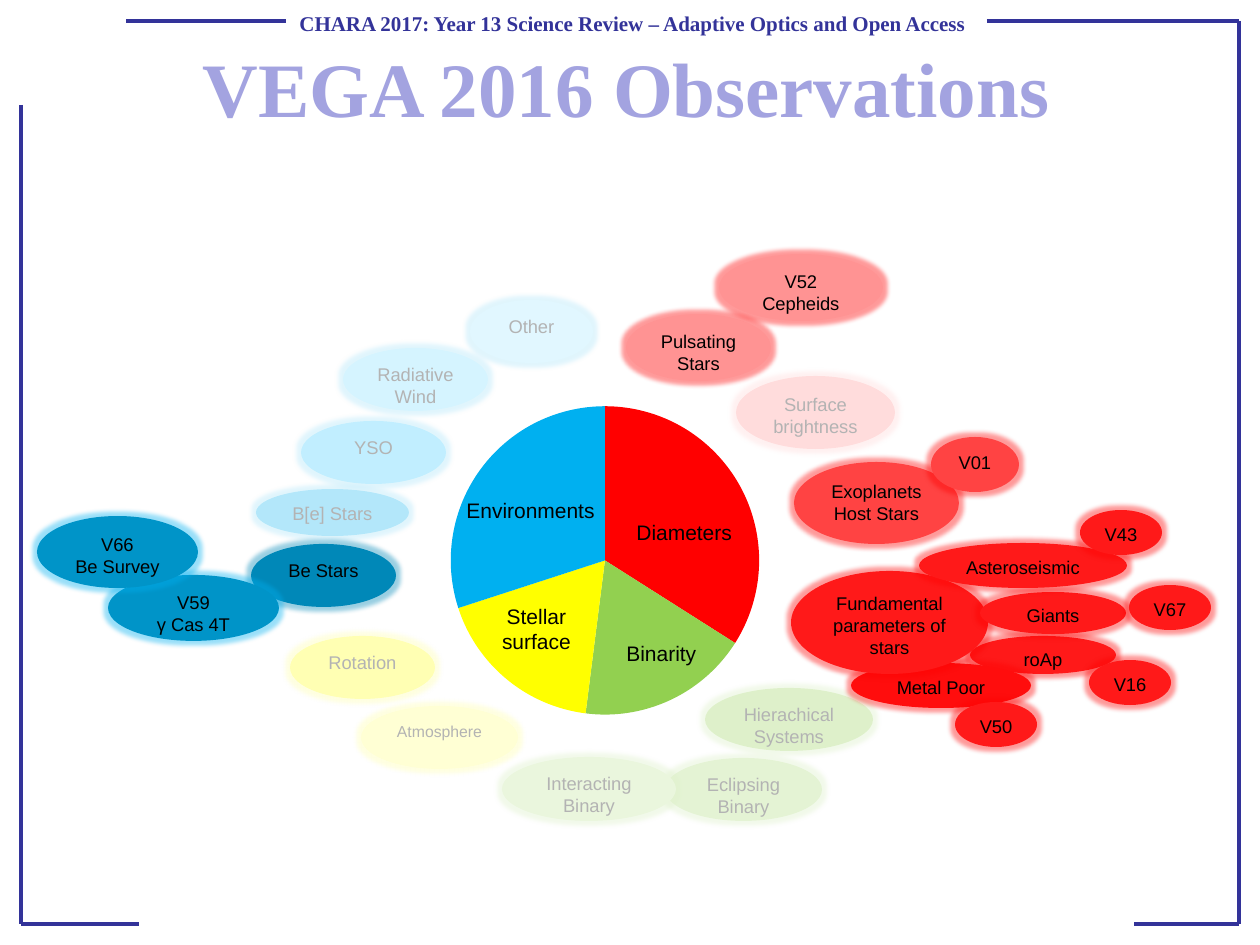
from typing import NamedTuple

from lxml.etree import SubElement
from pptx import Presentation
from pptx.chart.data import CategoryChartData
from pptx.dml.color import RGBColor
from pptx.enum.chart import XL_CHART_TYPE as ChartType
from pptx.enum.shapes import MSO_CONNECTOR as Connector, MSO_SHAPE as Shape
from pptx.enum.text import MSO_ANCHOR as Anchor, PP_ALIGN as Align
from pptx.oxml import parse_xml
from pptx.oxml.ns import nsdecls, qn
from pptx.util import Emu, Pt

NAVY, RED, GREEN, YELLOW, BLUE = "333399", "FF0000", "92D050", "FFFF00", "00B0F0"
ROSE, PINK, CORAL, SCARLET = "FF8B8B", "FF9393", "FF4343", "FF1919"
TEAL, OCEAN = "0088B8", "0094C8"
SERIF, SANS = "Times New Roman", "Arial"


class Box(NamedTuple):
    left: int
    top: int
    width: int
    height: int


class Bubble(NamedTuple):
    text: str
    box: Box
    fill: str
    glow: str
    size: float = 10.5


class Label(NamedTuple):
    text: str
    box: Box
    align: Align = Align.LEFT


class Line(NamedTuple):
    x1: int
    y1: int
    x2: int
    y2: int


FRAME = [
    Line(21, 105, 21, 924), Line(21, 924, 139, 924),
    Line(987, 21, 1239, 21), Line(1239, 21, 1239, 924),
    Line(126, 21, 286, 21), Line(1134, 924, 1239, 924),
]
FADED_TOPICS = [
    Bubble("Surface brightness", Box(736, 376, 159, 73), ROSE, ROSE),
    Bubble("Hierachical\nSystems", Box(705, 688, 168, 63), GREEN, GREEN),
    Bubble("Eclipsing Binary", Box(665, 758, 157, 63), "A7D971", GREEN),
    Bubble("Interacting\nBinary", Box(502, 757, 174, 64), "BAE18F", GREEN),
    Bubble("Atmosphere", Box(361, 706, 157, 63), "FFFF71", YELLOW, 9),
    Bubble("Rotation", Box(290, 636, 145, 63), YELLOW, YELLOW),
    Bubble("B[e] Stars", Box(256, 489, 153, 47), BLUE, BLUE),
    Bubble("YSO", Box(301, 421, 145, 63), "2FC9FF", BLUE),
    Bubble("Radiative Wind", Box(343, 348, 145, 63), "75DBFF", BLUE),
    Bubble("Other", Box(470, 300, 123, 63), "9BE5FF", BLUE),
]
ACTIVE_TOPICS = [
    Bubble("roAp", Box(970, 636, 146, 38), SCARLET, RED),
    Bubble("Exoplanets\nHost Stars", Box(794, 462, 165, 82), CORAL, RED),
    Bubble("Pulsating Stars", Box(626, 314, 145, 67), PINK, RED),
    Bubble("Be Stars", Box(251, 544, 145, 63), TEAL, TEAL),
    Bubble("Metal Poor", Box(851, 663, 180, 45), "FF0D0D", RED),
    Bubble("Fundamental parameters of stars", Box(791, 571, 197, 103), SCARLET, RED),
    Bubble("Giants", Box(980, 592, 146, 42), SCARLET, RED),
    Bubble("Asteroseismic", Box(919, 543, 208, 45), SCARLET, RED),
    Bubble("V59\nγ Cas 4T", Box(108, 575, 171, 66), OCEAN, BLUE),
    Bubble("V66\nBe Survey", Box(37, 516, 161, 72), OCEAN, BLUE),
    Bubble("V43", Box(1080, 510, 82, 45), SCARLET, RED),
    Bubble("V67", Box(1129, 585, 82, 45), SCARLET, RED),
    Bubble("V16", Box(1089, 660, 82, 45), SCARLET, RED),
    Bubble("V50", Box(955, 702, 82, 45), SCARLET, RED),
    Bubble("V01", Box(931, 437, 88, 55), CORAL, RED),
    Bubble("V52\nCepheids", Box(719, 254, 164, 67), PINK, RED),
]
PIE_LABELS = [
    Label("Environments", Box(454, 491, 168, 38)),
    Label("Diameters", Box(624, 513, 168, 38)),
    Label("Binarity", Box(614, 634, 102, 38)),
    Label("Stellar\nsurface", Box(487, 597, 99, 63), Align.CENTER),
]


def px(length: int) -> Emu:
    """Turn pixels into EMU."""
    return Emu(round(length * 914400 / 126))


def place(box: Box) -> list[Emu]:
    """Return the box in EMU."""
    return [px(length) for length in box]


def color(value: str) -> RGBColor:
    """Turn a hex string into a colour."""
    return RGBColor.from_string(value)


def write(shape, text: str, *, size: float, font: str = SANS, fill: str = "000000",
          bold: bool = False, align: Align = Align.LEFT, anchor: Anchor = Anchor.TOP,
          wrap: bool = True) -> None:
    """Write one paragraph for each line of text."""
    frame = shape.text_frame
    frame.word_wrap = wrap
    frame.vertical_anchor = anchor
    for index, words in enumerate(text.split("\n")):
        paragraph = frame.add_paragraph() if index else frame.paragraphs[0]
        paragraph.alignment = align
        run = paragraph.add_run()
        run.text = words
        run.font.name, run.font.size, run.font.bold = font, Pt(size), bold
        run.font.color.rgb = color(fill)


def add_ellipse(slide, box: Box, fill: str):
    """Add a plain ellipse without outline or shadow."""
    shape = slide.shapes.add_shape(Shape.OVAL, *place(box))
    shape.shadow.inherit = False
    shape.fill.solid()
    shape.fill.fore_color.rgb = color(fill)
    shape.line.fill.background()
    return shape


def add_bubble(slide, bubble: Bubble) -> None:
    """Add a glowing topic bubble."""
    shape = add_ellipse(slide, bubble.box, bubble.fill)
    effects = shape._element.spPr.find(qn("a:effectLst"))
    effects.append(parse_xml(
        f'<a:glow {nsdecls("a")} rad="63500"><a:srgbClr val="{bubble.glow}">'
        '<a:alpha val="40000"/></a:srgbClr></a:glow>'))
    shape.text_frame.margin_left = shape.text_frame.margin_right = 0
    write(shape, bubble.text, size=bubble.size, align=Align.CENTER)


def add_veil(slide, box: Box) -> None:
    """Add the translucent white ellipse that fades the topics below it."""
    shape = add_ellipse(slide, box, "FFFFFF")
    tint = shape._element.spPr.find(qn("a:solidFill"))[0]
    SubElement(tint, qn("a:alpha"), val="70000")


def add_line(slide, line: Line) -> None:
    """Add one line of the page frame."""
    connector = slide.shapes.add_connector(Connector.STRAIGHT, *map(px, line))
    connector.line.color.rgb = color(NAVY)
    connector.line.width = Pt(2.25)
    SubElement(connector._element.spPr, qn("a:effectLst"))


def add_pie(slide, box: Box) -> None:
    """Add the pie of observation shares."""
    data = CategoryChartData()
    data.categories = ["1", "2", "3", "4"]
    data.add_series("Series 1", (34, 18, 18, 30))
    chart = slide.shapes.add_chart(ChartType.PIE, *place(box), data).chart
    chart.has_legend = chart.has_title = False
    chart.font.name, chart.font.size = SERIF, Pt(10)
    chart.font.color.rgb = color("000000")
    plot = chart.plots[0]
    plot.vary_by_categories = True
    for index, fill in enumerate((RED, GREEN, YELLOW, BLUE)):
        point = plot.series[0].points[index].format
        point.fill.solid()
        point.fill.fore_color.rgb = color(fill)
        point.line.fill.background()
    area = chart._chartSpace.chart.plotArea
    for old in area.findall(qn("c:layout")):
        area.remove(old)
    area.insert(0, parse_xml(
        f'<c:layout {nsdecls("c")}><c:manualLayout><c:layoutTarget val="inner"/>'
        '<c:xMode val="edge"/><c:yMode val="edge"/><c:x val="0.2"/><c:y val="0.05"/>'
        '<c:w val="0.6"/><c:h val="0.9"/></c:manualLayout></c:layout>'))


def main() -> None:
    """Build and save the slide."""
    presentation = Presentation()
    presentation.slide_width, presentation.slide_height = px(1260), px(945)
    slide = presentation.slides.add_slide(presentation.slide_layouts[5])
    title = slide.shapes.title
    title.left, title.top, title.width, title.height = place(Box(33, 24, 1187, 126))
    write(title, "VEGA 2016 Observations", size=44, font=SERIF, fill="A3A3E0",
          bold=True, align=Align.CENTER, anchor=Anchor.MIDDLE)
    header = slide.shapes.add_textbox(*place(Box(287, 4, 699, 38)))
    write(header, "CHARA 2017: Year 13 Science Review – Adaptive Optics and Open Access",
          size=12, font=SERIF, fill=NAVY, bold=True, wrap=False)
    for line in FRAME:
        add_line(slide, line)
    for bubble in FADED_TOPICS:
        add_bubble(slide, bubble)
    add_veil(slide, Box(194, 242, 961, 630))
    add_pie(slide, Box(348, 389, 514, 343))
    for label in PIE_LABELS:
        write(slide.shapes.add_textbox(*place(label.box)), label.text, size=12,
              align=label.align)
    for bubble in ACTIVE_TOPICS:
        add_bubble(slide, bubble)
    presentation.save("out.pptx")


if __name__ == "__main__":
    main()
